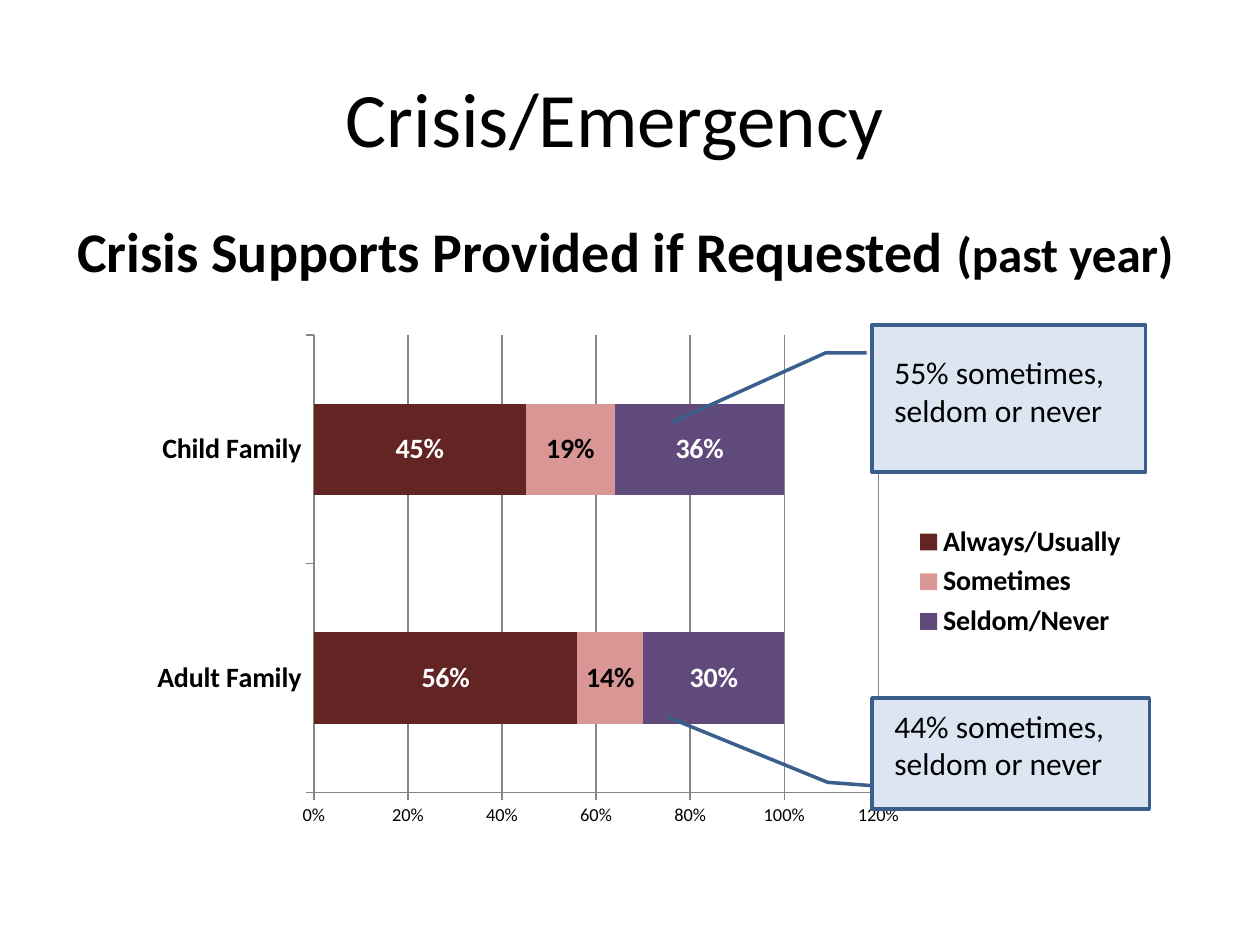
from dataclasses import dataclass

from lxml import etree
from pptx import Presentation
from pptx import util as u
from pptx.chart.data import CategoryChartData
from pptx.dml.color import RGBColor
from pptx.enum import chart as charts, shapes, text
from pptx.oxml import parse_xml
from pptx.oxml.ns import nsdecls, qn


@dataclass(frozen=True)
class Theme:
    font: str = "Calibri"
    ink: str = "000000"
    paper: str = "FFFFFF"
    grid: str = "868686"
    callout_fill: str = "DCE6F2"
    callout_line: str = "3A5F8C"
    always: str = "632523"
    sometimes: str = "D99694"
    seldom: str = "604A7B"
    title: float = 44
    heading: float = 32
    aside: float = 28
    note: float = 18
    label: float = 16
    tick: float = 10.5


def rgb(value):
    return RGBColor.from_string(value)


def cm(*lengths):
    return [u.Cm(length) for length in lengths]


class SlideBuilder:
    def __init__(self, page, theme):
        self.page = page
        self.theme = theme

    def style_font(self, font, size, color=None, bold=False):
        font.name = self.theme.font
        font.size = u.Pt(size)
        font.bold = bold
        font.color.rgb = rgb(color or self.theme.ink)

    def add_text(self, frame, spans, align=text.PP_ALIGN.LEFT, bold=False,
                 anchor=text.MSO_ANCHOR.TOP):
        box = self.page.shapes.add_textbox(*cm(*frame))
        box.text_frame.word_wrap = True
        box.text_frame.vertical_anchor = anchor
        para = box.text_frame.paragraphs[0]
        para.alignment = align
        self.style_font(para.font, spans[0][1], bold=bold)
        for words, size in spans:
            span = para.add_run()
            span.text = words
            if size != spans[0][1]:
                span.font.size = u.Pt(size)
        return box

    def add_callout(self, frame, pointer, note_frame, note):
        callout = self.page.shapes.add_shape(
            shapes.MSO_SHAPE.LINE_CALLOUT_2, *cm(*frame))
        for index, value in enumerate(pointer):
            callout.adjustments[index] = value
        callout.shadow.inherit = False
        callout.fill.solid()
        callout.fill.fore_color.rgb = rgb(self.theme.callout_fill)
        callout.line.color.rgb = rgb(self.theme.callout_line)
        callout.line.width = u.Pt(2)
        box = self.add_text(note_frame, [(note, self.theme.note)])
        box.text_frame.auto_size = text.MSO_AUTO_SIZE.SHAPE_TO_FIT_TEXT

    def add_stacked_bars(self, frame, categories, series, plot_frame):
        data = CategoryChartData(number_format="0%")
        data.categories = categories
        for name, values, _, _ in series:
            data.add_series(name, values)
        chart = self.page.shapes.add_chart(
            charts.XL_CHART_TYPE.BAR_STACKED, *cm(*frame), data).chart
        self.style_font(chart.font, 10)
        chart.has_title = False
        chart.has_legend = True
        chart.legend.position = charts.XL_LEGEND_POSITION.RIGHT
        chart.legend.include_in_layout = False
        self.style_font(chart.legend.font, self.theme.label, bold=True)

        plot = chart.plots[0]
        plot.gap_width = 150
        plot.overlap = 100
        plot.vary_by_categories = False
        for bars, (_, _, fill, label_color) in zip(plot.series, series):
            bars.format.fill.solid()
            bars.format.fill.fore_color.rgb = rgb(fill)
            labels = bars.data_labels
            labels.show_value = True
            labels.number_format = "0%"
            labels.number_format_is_linked = False
            labels.position = charts.XL_LABEL_POSITION.CENTER
            self.style_font(labels.font, self.theme.label, label_color, bold=True)

        names, scale = chart.category_axis, chart.value_axis
        self.style_font(names.tick_labels.font, self.theme.label, bold=True)
        self.style_font(scale.tick_labels.font, self.theme.tick)
        scale.minimum_scale, scale.maximum_scale, scale.major_unit = 0, 1.2, 0.2
        scale.tick_labels.number_format = "0%"
        scale.tick_labels.number_format_is_linked = False
        scale.has_major_gridlines = True
        for line in (names.format.line, scale.format.line,
                     scale.major_gridlines.format.line):
            line.color.rgb = rgb(self.theme.grid)
            line.width = u.Pt(0.75)
        for axis in (names, scale):
            axis.major_tick_mark = charts.XL_TICK_MARK.OUTSIDE
        self.place_plot(chart, plot_frame)

    def place_plot(self, chart, plot_frame):
        area = chart.plots[0]._element.getparent()
        for old in area.findall(qn("c:layout")):
            area.remove(old)
        layout = parse_xml(f"<c:layout {nsdecls('c')}><c:manualLayout/></c:layout>")
        settings = [("layoutTarget", "inner"), ("xMode", "edge"), ("yMode", "edge")]
        settings += zip("xywh", plot_frame)
        for tag, value in settings:
            etree.SubElement(layout[0], qn(f"c:{tag}")).set("val", str(value))
        area.insert(0, layout)


def main():
    theme = Theme()
    deck = Presentation()
    deck.slide_width, deck.slide_height = cm(25.4, 19.05)
    slide = SlideBuilder(deck.slides.add_slide(deck.slide_layouts[6]), theme)

    slide.add_text((0.97, 0.76, 22.86, 3.18), [("Crisis/Emergency", theme.title)],
                   text.PP_ALIGN.CENTER, anchor=text.MSO_ANCHOR.MIDDLE)
    slide.add_text((0.64, 4.24, 23.93, 13.54),
                   [("Crisis Supports Provided if Requested ", theme.heading),
                    ("(past year)", theme.aside)],
                   text.PP_ALIGN.CENTER, bold=True)
    slide.add_stacked_bars(
        (2.67, 6.55, 20.32, 10.36),
        ["Adult Family", "Child Family"],
        [("Always/Usually", (0.56, 0.45), theme.always, theme.paper),
         ("Sometimes", (0.14, 0.19), theme.sometimes, theme.ink),
         ("Seldom/Never", (0.30, 0.36), theme.seldom, theme.paper)],
        (0.18, 0.02, 0.56, 0.89))
    slide.add_callout((17.58, 6.55, 5.51, 2.97),
                      (0.19, -0.02, 0.19, -0.17, 0.66, -0.73),
                      (17.78, 6.99, 5.38, 1.8), "55% sometimes, seldom or never")
    slide.add_callout((17.58, 14.07, 5.59, 2.24),
                      (0.79, 0, 0.76, -0.16, 0.17, -0.74),
                      (17.78, 14.12, 5.72, 1.8), "44% sometimes, seldom or never")
    deck.save("out.pptx")


if __name__ == "__main__":
    main()
